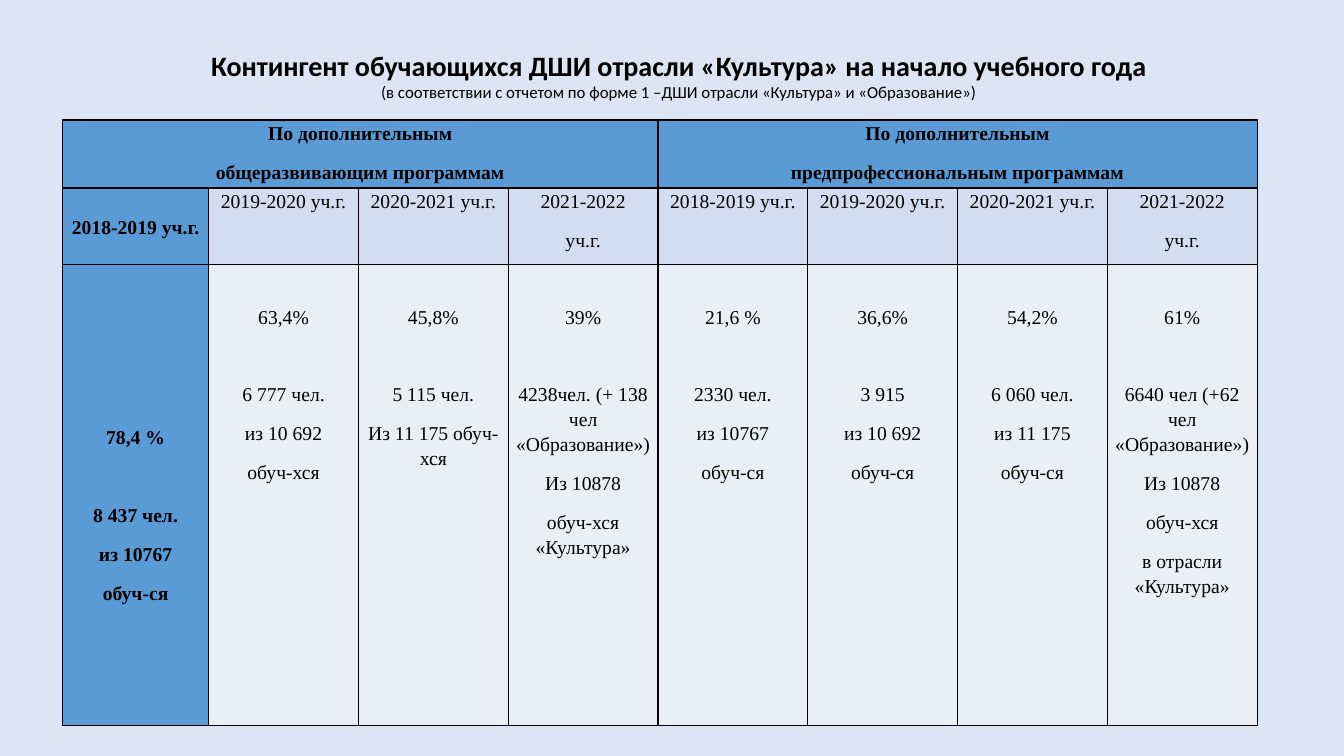
from lxml import etree
from pptx import Presentation
from pptx.dml.color import RGBColor
from pptx.enum import text
from pptx.oxml import ns
from pptx.util import Inches, Pt

BLACK = RGBColor(0x00, 0x00, 0x00)
BACKDROP = RGBColor(0xDC, 0xE5, 0xF4)
HEAD = RGBColor(0x5B, 0x9B, 0xD5)
YEAR = RGBColor(0xD2, 0xDE, 0xEF)
BODY = RGBColor(0xEA, 0xEF, 0xF7)

GROUPS = [
    ["По дополнительным", "общеразвивающим программам"],
    ["По дополнительным", "предпрофессиональным программам"],
]
YEARS = [["2018-2019 уч.г."], ["2019-2020 уч.г."], ["2020-2021 уч.г."],
         ["2021-2022", "уч.г."]]
FIGURES = [
    ["78,4 %", "8 437 чел.", "из 10767", "обуч-ся"],
    ["63,4%", "6 777 чел.", "из 10 692", "обуч-хся"],
    ["45,8%", "5 115 чел.", "Из 11 175 обуч-хся"],
    ["39%", "4238чел. (+ 138 чел «Образование»)", "Из 10878",
     "обуч-хся «Культура»"],
    ["21,6 %", "2330 чел.", "из 10767", "обуч-ся"],
    ["36,6%", "3 915", "из 10 692", "обуч-ся"],
    ["54,2%", "6 060 чел.", "из 11 175", "обуч-ся"],
    ["61%", "6640 чел (+62 чел «Образование»)", "Из 10878", "обуч-хся",
     "в отрасли «Культура»"],
]


class Painter:
    """Draws styled elements on the current page."""

    def __init__(self, page):
        self.page = page
        self.heading_font = "Calibri"
        self.table_font = "Times New Roman"
        self.gap = 27.7

    def background(self, color):
        fill = self.page.background.fill
        fill.solid()
        fill.fore_color.rgb = color

    def paragraph(self, para, words, font, size, bold):
        para.text = words
        para.alignment = text.PP_ALIGN.CENTER
        para.font.name = font
        para.font.size = Pt(size)
        para.font.bold = bold
        para.font.color.rgb = BLACK

    def heading(self, left, top, width, height, title, note):
        box = self.page.shapes.add_textbox(
            Inches(left), Inches(top), Inches(width), Inches(height))
        frame = box.text_frame
        frame.word_wrap = True
        frame.auto_size = text.MSO_AUTO_SIZE.SHAPE_TO_FIT_TEXT
        self.paragraph(frame.paragraphs[0], title, self.heading_font, 20, True)
        self.paragraph(frame.add_paragraph(), note, self.heading_font, 12, False)

    def table(self, left, top, widths, heights):
        frame = self.page.shapes.add_table(
            len(heights), len(widths), Inches(left), Inches(top),
            Inches(sum(widths)), Inches(sum(heights)))
        table = frame.table
        for column, width in zip(table.columns, widths):
            column.width = Inches(width)
        for row, height in zip(table.rows, heights):
            row.height = Inches(height)
        return table

    def cell(self, cell, color, lines=(), bold=False, middle=False, spaced=False):
        cell.fill.solid()
        cell.fill.fore_color.rgb = color
        cell.margin_left = cell.margin_right = Inches(0.07)
        cell.margin_top = Pt(self.gap) if spaced else 0
        cell.margin_bottom = 0
        if middle:
            cell.vertical_anchor = text.MSO_ANCHOR.MIDDLE
        frame = cell.text_frame
        for index, line in enumerate(lines):
            para = frame.add_paragraph() if index else frame.paragraphs[0]
            self.paragraph(para, line, self.table_font, 14, bold)
            para.line_spacing = 1.15
            para.space_after = Pt(10)
            if spaced and index == 1:
                para.space_before = Pt(self.gap)
        self.borders(cell)

    def borders(self, cell):
        properties = cell._tc.get_or_add_tcPr()
        for index, side in enumerate(("lnL", "lnR", "lnT", "lnB")):
            line = etree.Element(ns.qn(f"a:{side}"), w=str(Pt(1)))
            fill = etree.SubElement(line, ns.qn("a:solidFill"))
            etree.SubElement(fill, ns.qn("a:srgbClr"), val=str(BLACK))
            properties.insert(index, line)


def main():
    deck = Presentation()
    deck.slide_width = Inches(13.33)
    deck.slide_height = Inches(7.5)
    painter = Painter(deck.slides.add_slide(deck.slide_layouts[6]))
    painter.background(BACKDROP)
    painter.heading(
        1.47, 0.43, 10.53, 0.88,
        "Контингент обучающихся ДШИ отрасли «Культура» на начало учебного года",
        "(в соответствии с отчетом по форме 1 –ДШИ отрасли «Культура» и «Образование»)")

    first, total = 1.45, 11.85
    widths = [first] + [(total - first) / 7] * 7
    table = painter.table(0.62, 1.19, widths, [0.55, 0.76, 4.57])
    span = len(YEARS)
    for column, figures in enumerate(FIGURES):
        group, offset = divmod(column, span)
        lead = column == 0
        painter.cell(table.cell(0, column), HEAD,
                     () if offset else GROUPS[group], bold=True)
        painter.cell(table.cell(1, column), HEAD if lead else YEAR,
                     YEARS[offset], bold=lead, middle=lead)
        painter.cell(table.cell(2, column), HEAD if lead else BODY,
                     figures, bold=lead, middle=lead, spaced=True)
    for start in (0, span):
        table.cell(0, start).merge(table.cell(0, start + span - 1))
    deck.save("out.pptx")


if __name__ == "__main__":
    main()
